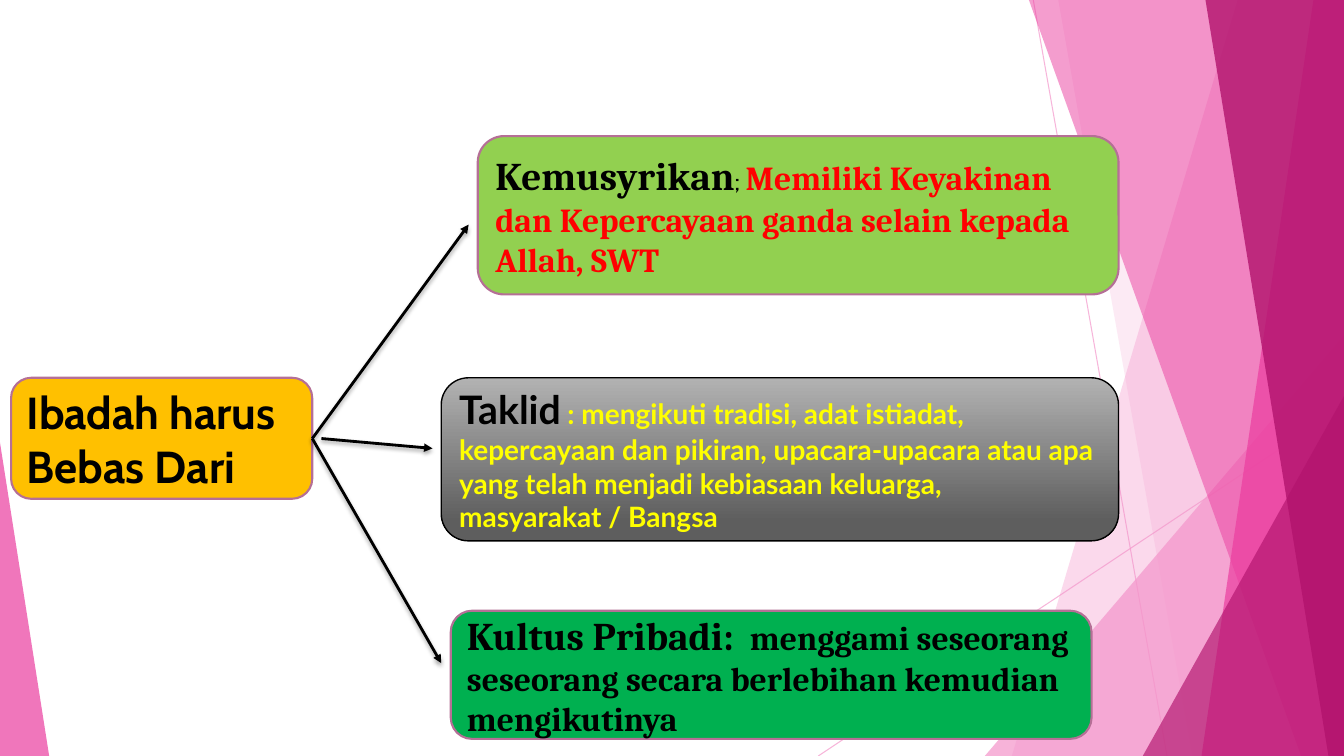
from dataclasses import dataclass

from lxml.etree import SubElement
from pptx import Presentation
from pptx.dml.color import RGBColor
from pptx.enum.shapes import MSO_CONNECTOR, MSO_SHAPE
from pptx.enum.text import MSO_ANCHOR, PP_ALIGN
from pptx.oxml.ns import qn
from pptx.util import Cm, Pt


@dataclass(frozen=True)
class Theme:
    """Colours, fonts and type sizes of the slide."""
    black: str = "000000"
    red: str = "FF0000"
    yellow: str = "FFFF00"
    amber: str = "FFC000"
    lime: str = "92D050"
    green: str = "00B050"
    silver: str = "B2B2B2"
    graphite: str = "5E5E5E"
    mauve: str = "B56F96"
    pale_pink: str = "F496CB"
    pink: str = "EB3D9F"
    magenta: str = "B2136D"
    sans: str = "Cabin"
    serif: str = "Cambria"
    humanist: str = "Lato"
    root_size: int = 32
    term_size: int = 28
    body_size: int = 24
    detail_size: int = 20
    small_size: int = 18


THEME = Theme()
WIDTH, HEIGHT = 33.87, 19.05


def colour(code):
    """Return the colour for a hexadecimal code."""
    return RGBColor.from_string(code)


def set_alpha(shape, percent):
    """Make the colours of a shape or line partly transparent."""
    for node in shape.element.spPr.iter(qn("a:srgbClr")):
        SubElement(node, qn("a:alpha"), val=str(percent * 1000))


def add_facet(slide, points, code, percent):
    """Draw one translucent polygon of the backdrop."""
    start, *rest = [(Cm(x), Cm(y)) for x, y in points]
    builder = slide.shapes.build_freeform(*start, scale=1.0)
    builder.add_line_segments(rest, close=True)
    facet = builder.convert_to_shape()
    facet.shadow.inherit = False
    facet.fill.solid()
    facet.fill.fore_color.rgb = colour(code)
    facet.line.fill.background()
    set_alpha(facet, percent)


def add_band(slide, top_x, bottom_x, code, percent):
    """Draw a full-height facet from a slanted edge to the right margin."""
    points = [(top_x, 0), (WIDTH, 0), (WIDTH, HEIGHT), (bottom_x, HEIGHT)]
    add_facet(slide, points, code, percent)


def add_corner(slide, side_x, top, foot_x, code, percent):
    """Draw a right-angled facet in a bottom corner."""
    points = [(side_x, top), (side_x, HEIGHT), (foot_x, HEIGHT)]
    add_facet(slide, points, code, percent)


def add_line(slide, start, end, code, width):
    """Draw a straight line without effects."""
    ends = [Cm(value) for value in (*start, *end)]
    line = slide.shapes.add_connector(MSO_CONNECTOR.STRAIGHT, *ends)
    line.line.color.rgb = colour(code)
    line.line.width = Pt(width)
    SubElement(line.element.spPr, qn("a:effectLst"))
    return line


def add_arrow(slide, start, end):
    """Draw a black arrow with a soft shadow below it."""
    arrow = add_line(slide, start, end, THEME.black, 2)
    properties = arrow.element.spPr
    SubElement(properties.find(qn("a:ln")), qn("a:tailEnd"), type="triangle")
    shadow = SubElement(properties.find(qn("a:effectLst")), qn("a:outerShdw"),
                        blurRad=str(Pt(3)), dist=str(Pt(2)), dir="5400000", rotWithShape="0")
    shade = SubElement(shadow, qn("a:srgbClr"), val=THEME.black)
    SubElement(shade, qn("a:alpha"), val="35000")


def add_box(slide, place, fill, spans, outline=THEME.mauve, line_width=1.5):
    """Draw a rounded box holding one paragraph of formatted spans."""
    box = slide.shapes.add_shape(MSO_SHAPE.ROUNDED_RECTANGLE, *map(Cm, place))
    box.shadow.inherit = False
    box.line.color.rgb = colour(outline)
    box.line.width = Pt(line_width)
    box.fill.solid()
    box.fill.fore_color.rgb = colour(fill)
    frame = box.text_frame
    frame.word_wrap = True
    frame.vertical_anchor = MSO_ANCHOR.MIDDLE
    para = frame.paragraphs[0]
    para.alignment = PP_ALIGN.LEFT
    for text, size, font, code, bold in spans:
        span = para.add_run()
        span.text = text
        span.font.size = Pt(size)
        span.font.name = font
        span.font.bold = bold
        span.font.color.rgb = colour(code)
    return box


def shade_box(box, stops):
    """Fill a box with a gradient running from top to bottom."""
    box.fill.gradient()
    box.fill.gradient_angle = 270
    for stop, (position, code) in zip(box.fill.gradient_stops, stops):
        stop.position = position
        stop.color.rgb = colour(code)


def add_backdrop(slide):
    """Draw the pink facets behind the content."""
    for start, end in [((26.04, 0), (29.41, HEIGHT)), ((WIDTH, 10.24), (20.62, HEIGHT))]:
        set_alpha(add_line(slide, start, end, THEME.pale_pink, 0.75), 70)
    add_band(slide, 31.19, 25.5, THEME.pale_pink, 36)
    add_band(slide, 26.67, 30.05, THEME.pale_pink, 20)
    add_corner(slide, WIDTH, 8.46, 24.82, THEME.pale_pink, 72)
    add_band(slide, 25.93, 32.79, THEME.pink, 50)
    add_band(slide, 33.1, 30.28, THEME.pink, 70)
    add_band(slide, 30.38, 33.48, THEME.magenta, 80)
    add_corner(slide, WIDTH, 9.98, 28.8, THEME.magenta, 66)
    add_corner(slide, 0, 11.15, 1.24, THEME.pink, 70)


def add_boxes(slide):
    """Draw the root statement and the three things to avoid."""
    black, serif, humanist = THEME.black, THEME.serif, THEME.humanist
    add_box(slide, (0.28, 9.52, 7.59, 3.05), THEME.amber, [
        ("Ibadah harus Bebas Dari", THEME.root_size, THEME.sans, black, True)])
    add_box(slide, (12.04, 3.43, 16.15, 3.99), THEME.lime, [
        ("Kemusyrikan", THEME.term_size, serif, black, True),
        ("; ", THEME.small_size, THEME.sans, black, False),
        ("Memiliki Keyakinan dan Kepercayaan ganda selain kepada Allah, SWT",
         THEME.body_size, serif, THEME.red, True)])
    taklid = add_box(slide, (11.12, 9.52, 17.07, 4.11), THEME.silver, [
        ("Taklid", THEME.term_size, humanist, black, True),
        (" ", THEME.small_size, humanist, black, False),
        (": mengikuti tradisi, adat istiadat, kepercayaan dan pikiran, upacara-upacara "
         "atau apa yang telah menjadi kebiasaan keluarga, masyarakat / Bangsa",
         THEME.detail_size, humanist, THEME.yellow, True)], black, 1)
    shade_box(taklid, [(0, THEME.silver), (0.88, THEME.graphite)])
    add_box(slide, (11.36, 15.39, 16.15, 3.23), THEME.green, [
        ("Kultus Pribadi: ", THEME.term_size, serif, black, True),
        (" menggami seseorang seseorang secara berlebihan kemudian mengikutinya",
         THEME.body_size, serif, black, True)])


def main():
    """Build the slide and save the deck."""
    deck = Presentation()
    deck.slide_width, deck.slide_height = Cm(WIDTH), Cm(HEIGHT)
    page = deck.slides.add_slide(deck.slide_layouts[6])
    add_backdrop(page)
    add_boxes(page)
    root_edge = (7.87, 11.05)
    add_arrow(page, root_edge, (11.81, 5.66))
    add_arrow(page, root_edge, (11.12, 16.71))
    add_arrow(page, (8.1, 11.05), (10.9, 11.3))
    deck.save("out.pptx")


if __name__ == "__main__":
    main()
